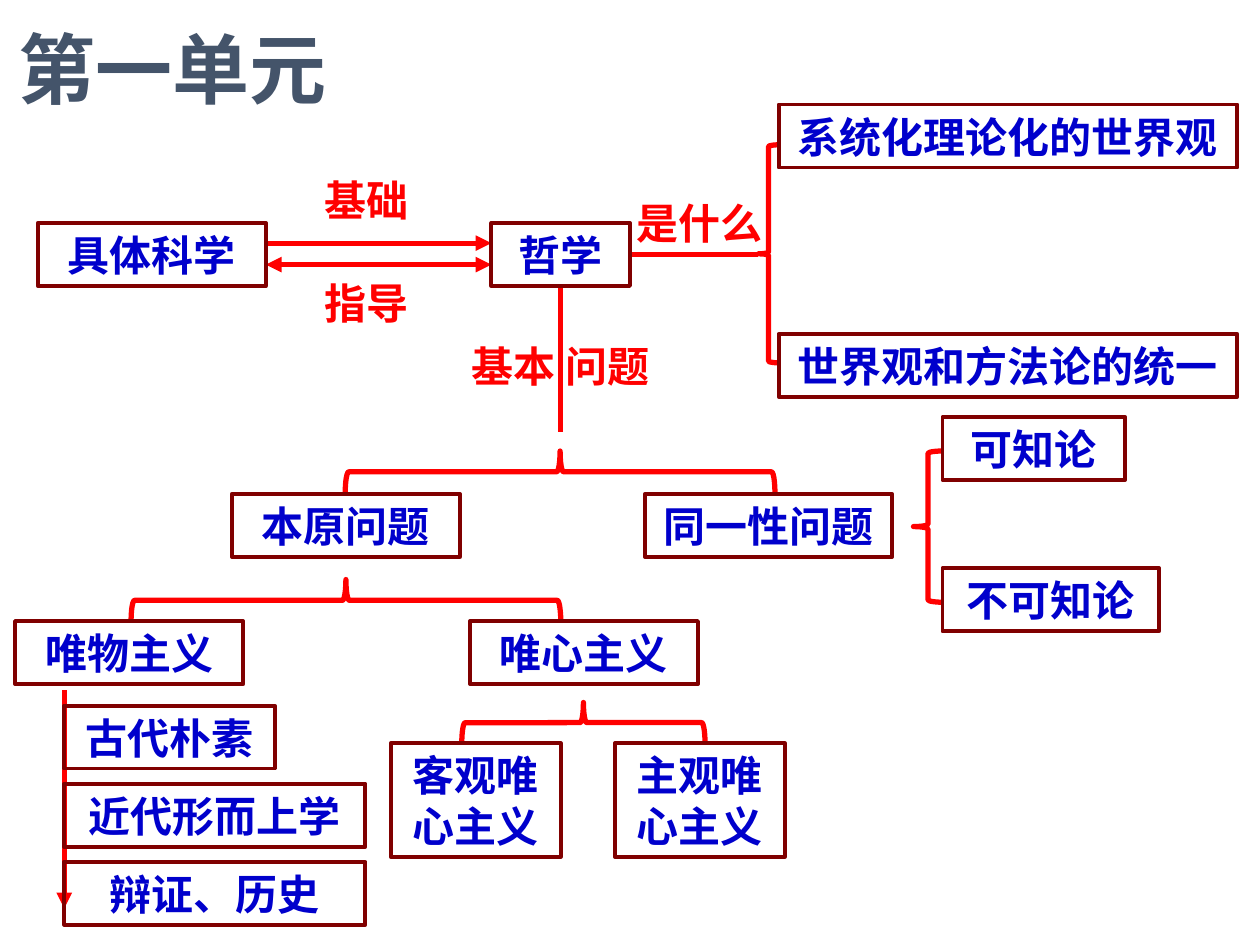
from dataclasses import dataclass
from typing import NamedTuple, Optional

from lxml.etree import SubElement
from pptx import Presentation
from pptx.dml.color import RGBColor
from pptx.enum.shapes import MSO_CONNECTOR as Connector, MSO_SHAPE as Shape
from pptx.enum.text import MSO_ANCHOR as Anchor, PP_ALIGN as Align
from pptx.oxml.ns import qn
from pptx.util import Inches, Pt

COLUMNS, ROWS = 100, 75  # grid cells over the slide
WIDTH, HEIGHT = Inches(10), Inches(7.5)


@dataclass(frozen=True)
class Theme:
    border: RGBColor = RGBColor(0x80, 0x00, 0x00)
    topic: RGBColor = RGBColor(0x00, 0x00, 0xCC)
    link: RGBColor = RGBColor(0xFF, 0x00, 0x00)
    title: RGBColor = RGBColor(0x44, 0x54, 0x6A)
    latin: str = "Roboto"
    chinese: str = "Noto Sans CJK SC"
    body_size: int = 24
    title_size: int = 44
    leading: float = 1.21
    border_width: float = 2.25
    link_width: float = 3


THEME = Theme()


class Block(NamedTuple):
    text: str
    left: float
    top: float
    width: float
    height: float = 5
    font: str = THEME.chinese


class Link(NamedTuple):
    start: tuple[float, float]
    end: tuple[float, float]
    head: bool = False
    tail: bool = False
    source: Optional[str] = None  # topic the link leaves from
    site: int = 0


class Brace(NamedTuple):
    center: tuple[float, float]
    depth: float
    span: float
    rotation: int = 0


def across(columns: float) -> int:
    return round(WIDTH * columns / COLUMNS)


def down(rows: float) -> int:
    return round(HEIGHT * rows / ROWS)


def frame(block: Block) -> tuple[int, int, int, int]:
    return across(block.left), down(block.top), across(block.width), down(block.height)


def write(box, block: Block, size: int, color: RGBColor, align=Align.CENTER) -> None:
    text_frame = box.text_frame
    text_frame.text = block.text
    text_frame.word_wrap = True
    text_frame.vertical_anchor = Anchor.MIDDLE
    para = text_frame.paragraphs[0]
    para.alignment = align
    para.line_spacing = Pt(round(size * THEME.leading))
    font = para.runs[0].font
    font.size, font.bold, font.name = Pt(size), True, block.font
    font.color.rgb = color
    SubElement(para.runs[0]._r.get_or_add_rPr(), qn("a:ea"), typeface=THEME.chinese)


def draw_topic(page, block: Block):
    box = page.shapes.add_shape(Shape.RECTANGLE, *frame(block))
    box.shadow.inherit = False
    box.fill.background()
    box.line.color.rgb = THEME.border
    box.line.width = Pt(THEME.border_width)
    write(box, block, THEME.body_size, THEME.topic)
    return box


def draw_label(page, block: Block, size: int, color: RGBColor, align=Align.CENTER) -> None:
    write(page.shapes.add_textbox(*frame(block)), block, size, color, align)


def draw_link(page, link: Link):
    line = page.shapes.add_connector(
        Connector.STRAIGHT, across(link.start[0]), down(link.start[1]),
        across(link.end[0]), down(link.end[1]))
    line.line.color.rgb = THEME.link
    line.line.width = Pt(THEME.link_width)
    stroke = line.line._get_or_add_ln()
    for wanted, tag in ((link.head, "a:headEnd"), (link.tail, "a:tailEnd")):
        if wanted:
            SubElement(stroke, qn(tag), type="triangle")
    SubElement(line._element.spPr, qn("a:effectLst"))
    return line


def draw_brace(page, brace: Brace) -> None:
    x, y = brace.center
    shape = page.shapes.add_shape(
        Shape.LEFT_BRACE, across(x - brace.depth / 2), down(y - brace.span / 2),
        across(brace.depth), down(brace.span))
    shape.rotation = brace.rotation
    shape.shadow.inherit = False
    shape.fill.background()
    shape.line.color.rgb = THEME.link
    shape.line.width = Pt(THEME.link_width)


TITLE = Block("第一单元", 0.5, 1.4, 61.4, 7.9)

MAIN_ROW, QUESTION_ROW, SCHOOL_ROW, IDEALISM_ROW = 17.7, 39.2, 49.3, 59
STEM = 5.1  # column of the materialism list
LATIN = THEME.latin
TOPICS = [
    # Philosophy and what it is
    Block("具体科学", 3, MAIN_ROW, 18.1, font=LATIN),
    Block("哲学", 39, MAIN_ROW, 11, font=LATIN),
    Block("系统化理论化的世界观", 61.8, 8.3, 36.4, font=LATIN),
    Block("世界观和方法论的统一", 61.8, 26.5, 36.4, font=LATIN),
    # The basic question and its two sides
    Block("本原问题", 18.4, QUESTION_ROW, 18.1, font=LATIN),
    Block("同一性问题", 51.2, QUESTION_ROW, 19.6, font=LATIN),
    Block("可知论", 74.8, 33.1, 14.5, font=LATIN),
    Block("不可知论", 74.8, 45.1, 17.2, font=LATIN),
    # Materialism and idealism
    Block("唯物主义", 1.2, SCHOOL_ROW, 18.1, font=LATIN),
    Block("唯心主义", 37.3, SCHOOL_ROW, 18.1, font=LATIN),
    Block("客观唯心主义", 31, IDEALISM_ROW, 13.5, 9),
    Block("主观唯心主义", 48.8, IDEALISM_ROW, 13.5, 9),
]
# Forms of materialism, evenly stacked
TOPICS += [
    Block(text, STEM, 56 + 6.2 * step, width)
    for step, (text, width) in enumerate(
        [("古代朴素", 16.7), ("近代形而上学", 23.9), ("辩证、历史", 23.9)])
]

LABELS = [
    Block("基础", 23.6, 13.3, 11),
    Block("指导", 23.6, 21.5, 11),
    Block("是什么", 49.2, 15.2, 12.6),
    Block("基本 问题", 35.3, 26.5, 18.4),
]

LINKS = [
    Link((50, 20.2), (60.2, 20.2), source="哲学", site=3),
    Link((21.1, 19.3), (39, 19.3), tail=True),
    Link((21.1, 21), (39, 21), head=True, tail=True),
    Link((44.5, 22.7), (44.5, 34.3), source="哲学", site=2),
    Link((STEM, 54.8), (STEM, 72.1), tail=True),
]

BRACES = [
    Brace((61, 20.15), 1.6, 17.3),
    Brace((73.65, 41.8), 2.3, 12),
    Brace((44.45, 37.45), 3.3, 34.1, 90),
    Brace((27.45, 47.65), 3.3, 34.1, 90),
    Brace((46.3, 57.35), 3.2, 19.3, 90),
]


def main() -> None:
    deck = Presentation()
    deck.slide_width, deck.slide_height = WIDTH, HEIGHT
    page = deck.slides.add_slide(deck.slide_layouts[6])

    # Links lie below the boxes
    lines = [draw_link(page, link) for link in LINKS]
    for brace in BRACES:
        draw_brace(page, brace)
    boxes = {block.text: draw_topic(page, block) for block in TOPICS}
    for link, line in zip(LINKS, lines):
        if link.source:
            line.begin_connect(boxes[link.source], link.site)

    # Labels and title
    for block in LABELS:
        draw_label(page, block, THEME.body_size, THEME.link)
    draw_label(page, TITLE, THEME.title_size, THEME.title, Align.LEFT)
    deck.save("out.pptx")


if __name__ == "__main__":
    main()
